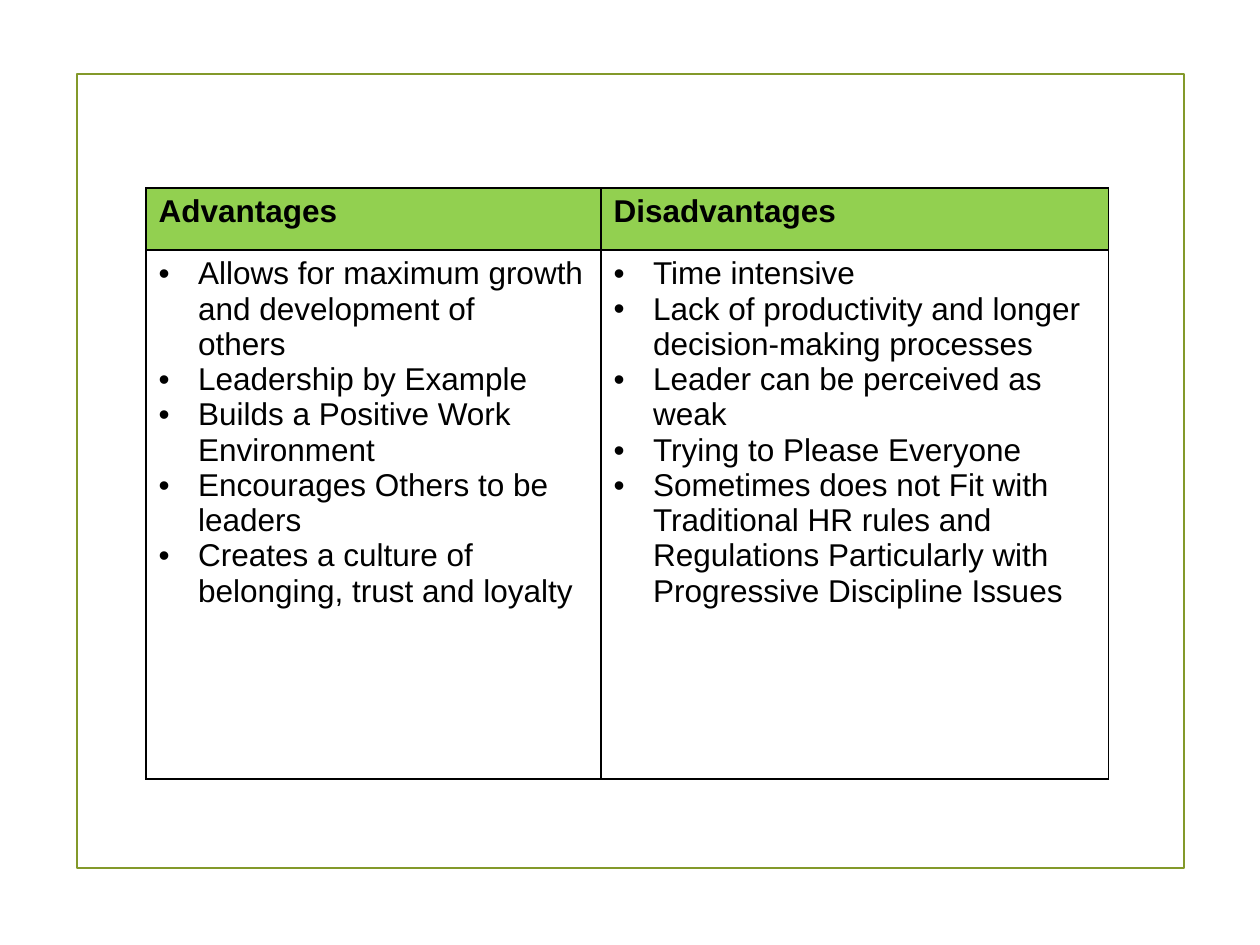
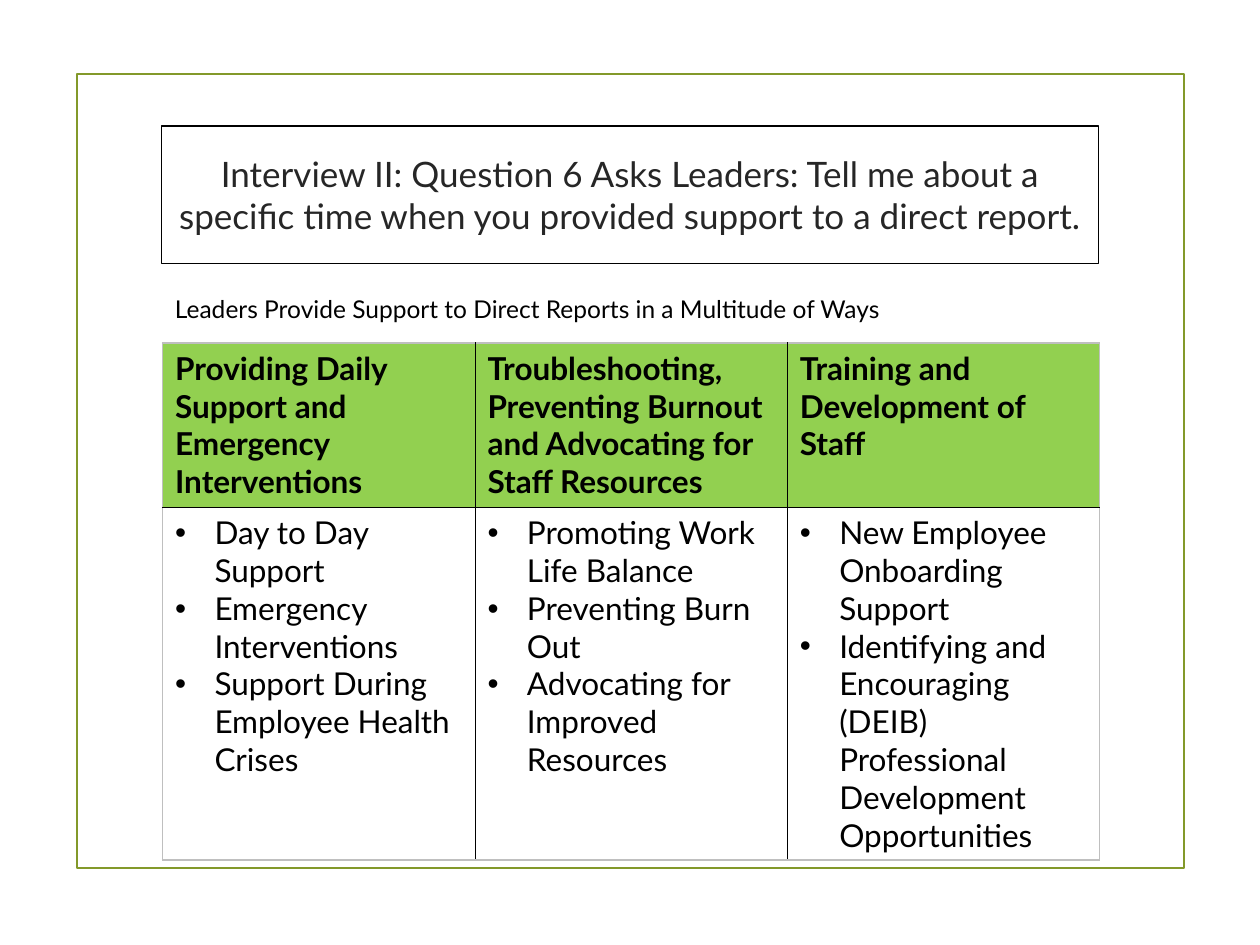
import pptx
import pptx.dml.color
import pptx.enum.shapes
import pptx.enum.text
import pptx.oxml.ns
import pptx.util
from lxml import etree

Pt = pptx.util.Pt

COLORS = {
    "frame": "83992A",
    "header": "92D050",
    "body": "FFFFFF",
    "ink": "000000",
    "title": "262626",
    "edge": "BFBFBF",
}
BULLET_INDENT = Pt(22.5)

# Text formats; each key is a font attribute
ARIAL_BODY = {"name": "Arial", "size": Pt(18), "bold": False}
LATO_BODY = {"name": "Lato", "size": Pt(18), "bold": False}
TITLE = {"name": "Lato", "size": Pt(20)}
CAPTION = {"name": "Lato", "size": Pt(14)}

# Header and bullet points of each column
PROS_AND_CONS = {
    "Advantages": [
        "Allows for maximum growth and development of\vothers",
        "Leadership by Example",
        "Builds a Positive Work Environment",
        "Encourages Others to be leaders",
        "Creates a culture of belonging, trust and loyalty",
    ],
    "Disadvantages": [
        "Time intensive",
        "Lack of productivity and longer decision-making processes",
        "Leader can be perceived as weak",
        "Trying to Please Everyone",
        "Sometimes does not Fit with Traditional HR rules and Regulations "
        "Particularly with Progressive Discipline Issues",
    ],
}
SUPPORT_WAYS = {
    "Providing Daily Support and Emergency Interventions": [
        "Day to Day Support",
        "Emergency Interventions",
        "Support During Employee Health Crises",
    ],
    "Troubleshooting, Preventing Burnout and Advocating for Staff Resources": [
        "Promoting Work Life Balance",
        "Preventing Burn Out",
        "Advocating for Improved Resources",
    ],
    "Training and Development of Staff": [
        "New Employee Onboarding Support",
        "Identifying and Encouraging (DEIB) Professional Development "
        "Opportunities",
    ],
}


def rgb(color):
    return pptx.dml.color.RGBColor.from_string(COLORS[color])


def sub_element(parent, tag, **attributes):
    return etree.SubElement(parent, pptx.oxml.ns.qn(tag), attributes)


def add_bullet(paragraph):
    properties = paragraph._p.get_or_add_pPr()
    properties.set("marL", str(BULLET_INDENT))
    properties.set("indent", str(-BULLET_INDENT))
    sub_element(properties, "a:buFont", typeface="Arial")
    sub_element(properties, "a:buChar", char="•")


def write(text_frame, lines, style, color="ink", bullets=False):
    for index, line in enumerate(lines):
        paragraph = text_frame.add_paragraph() if index else text_frame.paragraphs[0]
        paragraph.text = line
        if bullets:
            add_bullet(paragraph)
        for run in paragraph.runs:
            run.font.color.rgb = rgb(color)
            for attribute, value in style.items():
                setattr(run.font, attribute, value)


def add_outline(slide, box, color, width):
    rectangle = slide.shapes.add_shape(
        pptx.enum.shapes.MSO_SHAPE.RECTANGLE, *map(Pt, box))
    rectangle.shadow.inherit = False
    rectangle.fill.background()
    rectangle.line.color.rgb = rgb(color)
    rectangle.line.width = Pt(width)
    return rectangle


def add_framed_slide(deck):
    slide = deck.slides.add_slide(deck.slide_layouts[6])
    add_outline(slide, (43.92, 42.5, 632.9, 453.6), "frame", 1.25)
    return slide


def add_title(slide, title, box):
    panel = add_outline(slide, box, "ink", 0.75)
    panel.text_frame.word_wrap = True
    panel.text_frame.vertical_anchor = pptx.enum.text.MSO_ANCHOR.MIDDLE
    write(panel.text_frame, [title], TITLE, "title")
    panel.text_frame.paragraphs[0].alignment = pptx.enum.text.PP_ALIGN.CENTER


def add_caption(slide, caption, box):
    text_frame = slide.shapes.add_textbox(*map(Pt, box)).text_frame
    text_frame.word_wrap = True
    write(text_frame, [caption], CAPTION)


def set_borders(cell, borders):
    properties = cell._tc.get_or_add_tcPr()
    for side, (color, width) in borders.items():
        line = sub_element(properties, "a:ln" + side, w=str(Pt(width)))
        fill = sub_element(line, "a:solidFill")
        sub_element(fill, "a:srgbClr", val=COLORS[color])


def add_column_table(slide, columns, left, top, widths, heights, style,
                     outer, divider):
    """Draw one header row above one row of bullet lists."""
    table = slide.shapes.add_table(
        2, len(columns), Pt(left), Pt(top),
        Pt(sum(widths)), Pt(sum(heights))).table
    for row, height in zip(table.rows, heights):
        row.height = Pt(height)
    last = len(columns) - 1
    for index, (header, points) in enumerate(columns.items()):
        table.columns[index].width = Pt(widths[index])
        sides = {"L": divider if index else outer,
                 "R": divider if index < last else outer}
        under_header = ("ink", 1)
        header_cell, body_cell = table.cell(0, index), table.cell(1, index)

        set_borders(header_cell, {**sides, "T": outer, "B": under_header})
        set_borders(body_cell, {**sides, "T": under_header, "B": outer})
        for cell, color in ((header_cell, "header"), (body_cell, "body")):
            cell.fill.solid()
            cell.fill.fore_color.rgb = rgb(color)
        write(header_cell.text_frame, [header], {**style, "bold": True})
        write(body_cell.text_frame, points, style, bullets=True)


def main():
    deck = pptx.Presentation()
    deck.slide_width, deck.slide_height = Pt(720), Pt(540)

    # Advantages and disadvantages
    slide = add_framed_slide(deck)
    add_column_table(slide, PROS_AND_CONS, 83.5, 107.3, (260, 290),
                     (35.5, 302.4), ARIAL_BODY, ("ink", 1), ("ink", 1))

    # Interview question and ways of support
    slide = add_framed_slide(deck)
    add_title(slide, "Interview II: Question 6 Asks Leaders: Tell me about a "
              "specific time when you provided support to a direct report.",
              (92.2, 72, 535.7, 78.5))
    add_column_table(slide, SUPPORT_WAYS, 92.9, 195.9, (178.5,) * 3,
                     (94, 201.6), LATO_BODY, ("edge", 1), ("ink", 0.5))
    add_caption(slide, "Leaders Provide Support to Direct Reports in a "
                "Multitude of Ways", (92.9, 164.2, 535, 51))

    deck.save("out.pptx")


if __name__ == "__main__":
    main()
